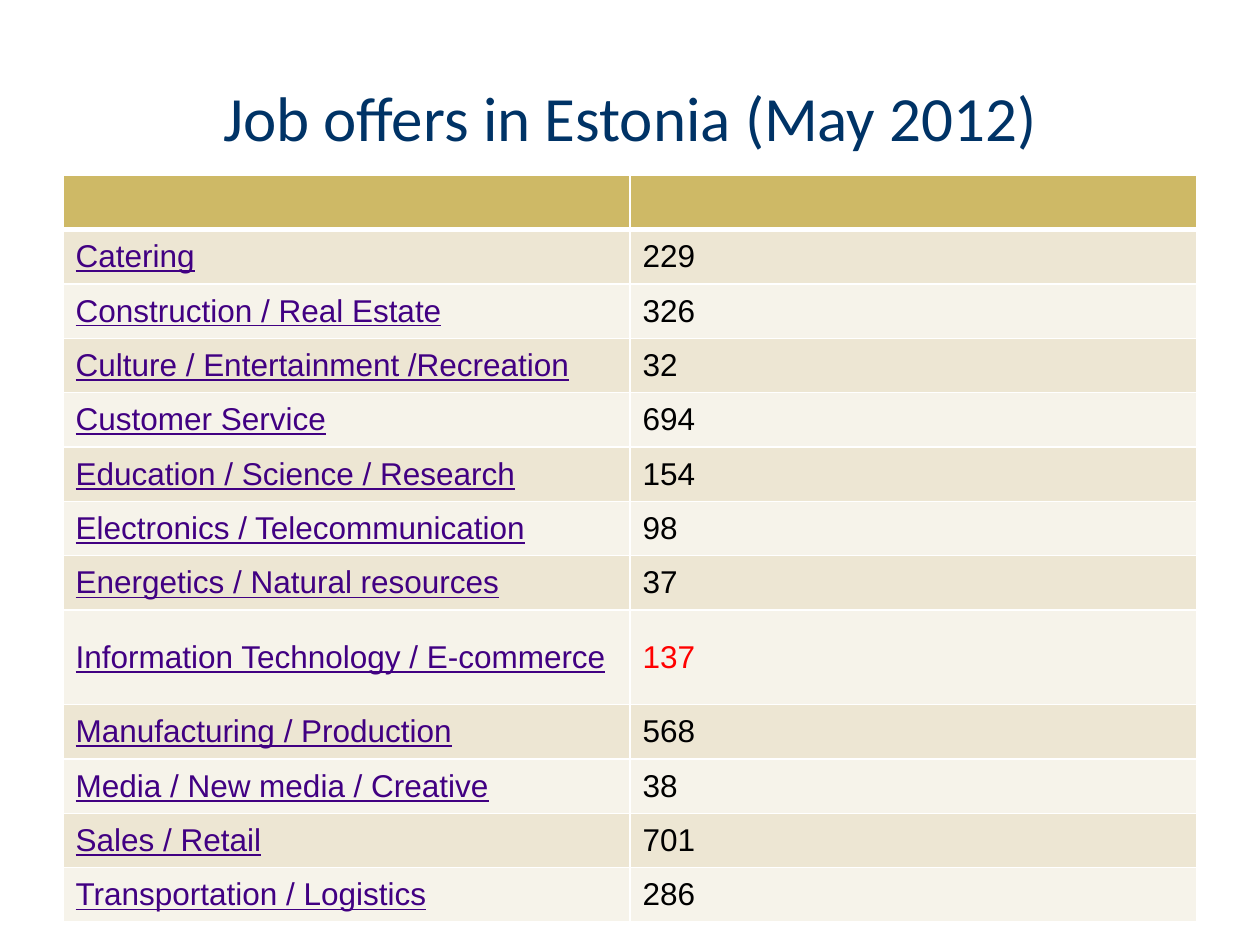
"""Build a slide with a table of job offers in Estonia by sector."""
from dataclasses import dataclass

from lxml.etree import SubElement
from pptx import Presentation
from pptx.dml.color import RGBColor as Rgb
from pptx.enum.text import MSO_ANCHOR as Anchor, PP_ALIGN as Align
from pptx.oxml.ns import qn
from pptx.util import Inches, Pt

COLORS = {
    "title": "003366",
    "header": "CEB966",
    "odd": "EDE6D3",
    "even": "F6F3EA",
    "border": "FFFFFF",
    "sector": "410082",
    "text": "000000",
    "highlight": "FF0000",
}
SLIDE_WIDTH, SLIDE_HEIGHT = Inches(10), Inches(7.5)
MARGIN = 0.05
TITLE_TOP, TITLE_HEIGHT = 0.04, 1 / 6
TABLE_TOP, TABLE_HEIGHT, TALL_ROW = 1.39 / 7.5, 5.93 / 7.5, 0.1


@dataclass(frozen=True)
class Offer:
    sector: str
    count: int
    highlighted: bool = False


OFFERS = [
    Offer("Catering", 229),
    Offer("Construction / Real Estate", 326),
    Offer("Culture / Entertainment /Recreation", 32),
    Offer("Customer Service", 694),
    Offer("Education / Science / Research", 154),
    Offer("Electronics / Telecommunication", 98),
    Offer("Energetics / Natural resources", 37),
    Offer("Information Technology / E-commerce", 137, highlighted=True),
    Offer("Manufacturing / Production", 568),
    Offer("Media / New media / Creative", 38),
    Offer("Sales / Retail", 701),
    Offer("Transportation / Logistics", 286),
]


def color(name: str) -> Rgb:
    return Rgb.from_string(COLORS[name])


def format_cell(cell, fill: str, top: float = 1, bottom: float = 1) -> None:
    properties = cell._tc.get_or_add_tcPr()
    for side, width in {"L": 1, "R": 1, "T": top, "B": bottom}.items():
        line = SubElement(properties, qn(f"a:ln{side}"), w=str(Pt(width)))
        solid = SubElement(line, qn("a:solidFill"))
        SubElement(solid, qn("a:srgbClr"), val=COLORS["border"])
    cell.fill.solid()
    cell.fill.fore_color.rgb = color(fill)
    cell.vertical_anchor = Anchor.MIDDLE


def write_cell(cell, text: str, text_color: str, underline: bool = False) -> None:
    paragraph = cell.text_frame.paragraphs[0]
    paragraph.add_run().text = text
    font = paragraph.font
    font.name, font.size, font.bold = "Arial", Pt(18), False
    font.color.rgb = color(text_color)
    font.underline = underline
    run_font = paragraph.runs[0].font
    run_font.name, run_font.size, run_font.bold = font.name, font.size, False
    run_font.color.rgb = color(text_color)
    run_font.underline = underline


def add_title(slide, text: str) -> None:
    title = slide.shapes.title
    title.left, title.top = int(SLIDE_WIDTH * MARGIN), int(SLIDE_HEIGHT * TITLE_TOP)
    title.width = int(SLIDE_WIDTH * (1 - 2 * MARGIN))
    title.height = int(SLIDE_HEIGHT * TITLE_HEIGHT)
    title.text_frame.text = text
    title.text_frame.vertical_anchor = Anchor.MIDDLE
    paragraph = title.text_frame.paragraphs[0]
    paragraph.alignment = Align.CENTER
    paragraph.font.name, paragraph.font.size = "Calibri", Pt(36)
    paragraph.font.color.rgb = color("title")


def add_offers_table(slide, offers: list[Offer]) -> None:
    table = slide.shapes.add_table(
        len(offers) + 1, 2,
        int(SLIDE_WIDTH * MARGIN), int(SLIDE_HEIGHT * TABLE_TOP),
        int(SLIDE_WIDTH * (1 - 2 * MARGIN)), int(SLIDE_HEIGHT * TABLE_HEIGHT),
    ).table
    row_share = (TABLE_HEIGHT - TALL_ROW) / len(offers)
    for row in table.rows:
        row.height = int(SLIDE_HEIGHT * row_share)
    for cell in table.rows[0].cells:
        format_cell(cell, "header", bottom=3)
    for index, offer in enumerate(offers, start=1):
        row = table.rows[index]
        if offer.highlighted:
            row.height = int(SLIDE_HEIGHT * TALL_ROW)
        for cell in row.cells:
            format_cell(cell, "odd" if index % 2 else "even", top=3 if index == 1 else 1)
        write_cell(row.cells[0], offer.sector, "sector", underline=True)
        write_cell(row.cells[1], str(offer.count), "highlight" if offer.highlighted else "text")


def main() -> None:
    presentation = Presentation()
    presentation.slide_width, presentation.slide_height = SLIDE_WIDTH, SLIDE_HEIGHT
    slide = presentation.slides.add_slide(presentation.slide_layouts.get_by_name("Title Only"))
    add_title(slide, "Job offers in Estonia (May 2012)")
    add_offers_table(slide, OFFERS)
    presentation.save("out.pptx")


if __name__ == "__main__":
    main()
